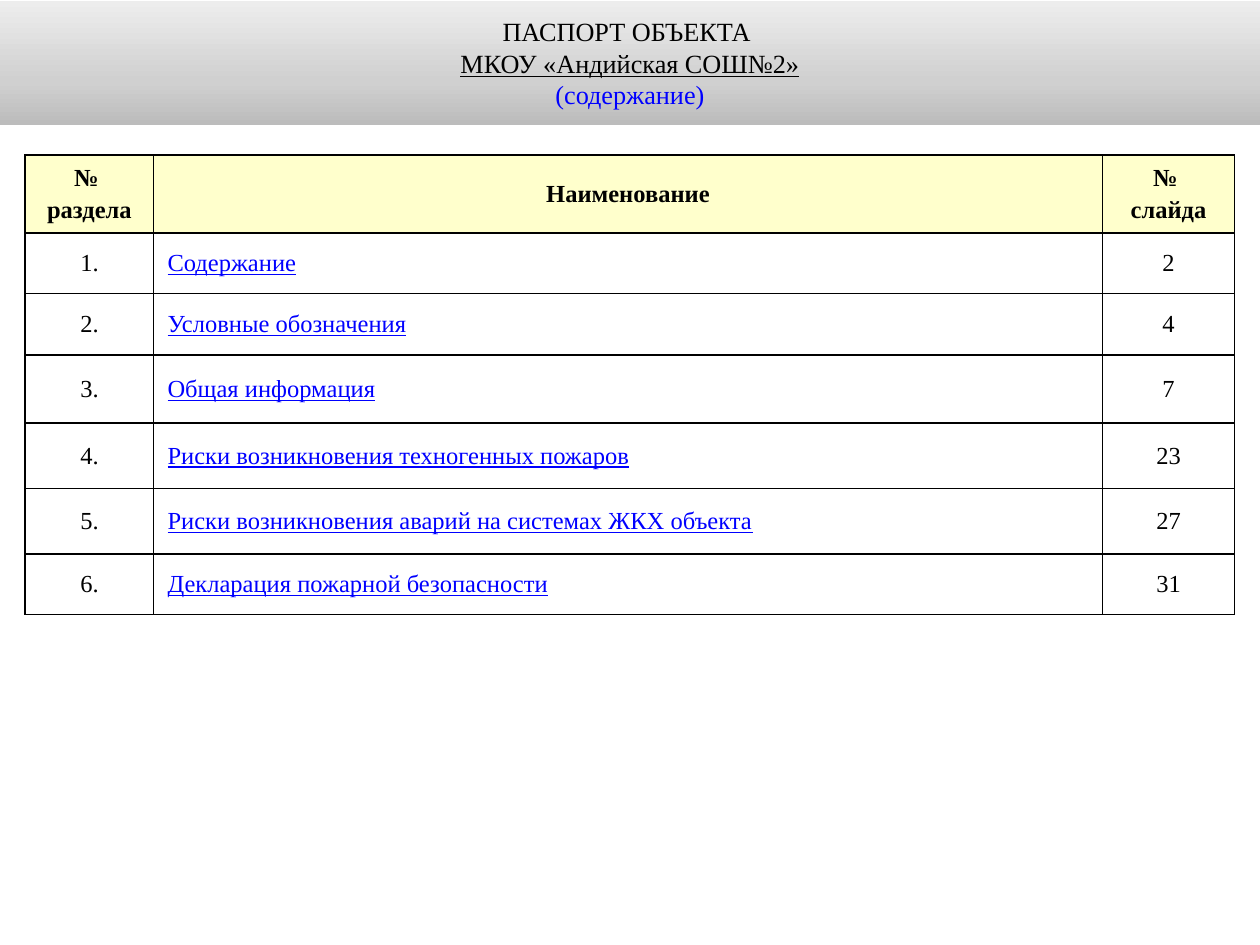
from lxml.etree import SubElement
from pptx import Presentation
from pptx.dml.color import RGBColor
from pptx.enum.shapes import MSO_SHAPE
from pptx.enum.text import MSO_ANCHOR, PP_ALIGN
from pptx.oxml import parse_xml
from pptx.oxml.ns import nsdecls, qn
from pptx.util import Inches, Pt

BLACK, BLUE, WHITE, CREAM = "000000", "0000FF", "FFFFFF", "FFFFCC"
COLUMN_WIDTHS = [1.02, 7.53, 1.05]
ROW_HEIGHTS = [0.62, 0.48, 0.49, 0.54, 0.52, 0.52, 0.48]
HEADINGS = [["№ ", "раздела"], ["Наименование"], ["№ ", "слайда"]]
SECTIONS = [
    ("Содержание", 2),
    ("Условные обозначения", 4),
    ("Общая информация", 7),
    ("Риски возникновения техногенных пожаров", 23),
    ("Риски возникновения аварий на системах ЖКХ объекта", 27),
    ("Декларация пожарной безопасности", 31),
]


def color(value):
    """Turn a hex string into a colour."""
    return RGBColor.from_string(value)


def write(paragraph, text, size=14, fill=BLACK, bold=False, underline=False,
          align=PP_ALIGN.CENTER, before=0):
    """Put one formatted line of text into a paragraph."""
    paragraph.alignment = align
    paragraph.space_before = Pt(before)
    span = paragraph.add_run()
    span.text = text
    span.font.name = "Times New Roman"
    span.font.size = Pt(size)
    span.font.bold = bold
    span.font.underline = underline
    span.font.color.rgb = color(fill)


def add_line(frame, index):
    """Return the first paragraph of a frame, or a new one after it."""
    return frame.paragraphs[0] if index == 0 else frame.add_paragraph()


def set_borders(cell, width=1):
    """Draw a black line on every side of a cell."""
    properties = cell._tc.get_or_add_tcPr()
    for index, side in enumerate(("lnL", "lnR", "lnT", "lnB")):
        line = parse_xml(
            f'<a:{side} {nsdecls("a")} w="{Pt(width)}"><a:solidFill>'
            f'<a:srgbClr val="{BLACK}"/></a:solidFill></a:{side}>')
        properties.insert(index, line)


def fill_cell(cell, lines, background=WHITE, **style):
    """Write lines into a cell and give it fill, margins and borders."""
    cell.fill.solid()
    cell.fill.fore_color.rgb = color(background)
    cell.vertical_anchor = MSO_ANCHOR.MIDDLE
    cell.margin_left = cell.margin_right = Inches(0.11)
    cell.margin_top = cell.margin_bottom = Inches(0.05)
    for index, text in enumerate(lines):
        write(add_line(cell.text_frame, index), text, **style)
    set_borders(cell)


def add_contents(page):
    """Add the table of sections."""
    frame = page.shapes.add_table(
        len(ROW_HEIGHTS), len(COLUMN_WIDTHS), Inches(0.2), Inches(1.23),
        Inches(sum(COLUMN_WIDTHS)), Inches(sum(ROW_HEIGHTS)))
    table = frame.table
    for column, width in zip(table.columns, COLUMN_WIDTHS):
        column.width = Inches(width)
    for row, height in zip(table.rows, ROW_HEIGHTS):
        row.height = Inches(height)
    for column, lines in enumerate(HEADINGS):
        fill_cell(table.cell(0, column), lines, CREAM, bold=True, before=2.8)
    for number, (title, slide_number) in enumerate(SECTIONS, 1):
        fill_cell(table.cell(number, 0), [f"{number}."])
        fill_cell(table.cell(number, 1), [title], fill=BLUE, underline=True,
                  align=PP_ALIGN.LEFT)
        fill_cell(table.cell(number, 2), [str(slide_number)])


def set_gradient(shape, stops, angle):
    """Fill a shape with a linear gradient of (percent, colour) stops."""
    shape.fill.gradient()
    shape.fill.gradient_angle = angle
    stop_list = shape._element.spPr.find(qn("a:gradFill")).find(qn("a:gsLst"))
    for stop in list(stop_list):
        stop_list.remove(stop)
    for percent, value in stops:
        stop = SubElement(stop_list, qn("a:gs"), pos=str(percent * 1000))
        SubElement(stop, qn("a:srgbClr"), val=value)


def add_banner(page):
    """Add the heading band across the top."""
    box = page.shapes.add_shape(MSO_SHAPE.RECTANGLE, 0, Inches(0.01),
                                Inches(10), Inches(0.98))
    box.shadow.inherit = False
    box.line.fill.background()
    set_gradient(box, [(0, "BCBCBC"), (35, "D0D0D0"), (100, "EDEDED")], 90)
    frame = box.text_frame
    frame.word_wrap = True
    frame.vertical_anchor = MSO_ANCHOR.MIDDLE
    lines = [
        ("ПАСПОРТ ОБЪЕКТА ", {}),
        ("МКОУ «Андийская СОШ№2»", {"underline": True}),
        ("(содержание)", {"fill": BLUE}),
    ]
    for index, (text, style) in enumerate(lines):
        write(add_line(frame, index), text, size=15, **style)


def main():
    """Build the contents slide and save it."""
    deck = Presentation()
    deck.slide_width, deck.slide_height = Inches(10), Inches(7.5)
    page = deck.slides.add_slide(deck.slide_layouts[6])
    add_contents(page)
    add_banner(page)
    deck.save("out.pptx")


if __name__ == "__main__":
    main()
